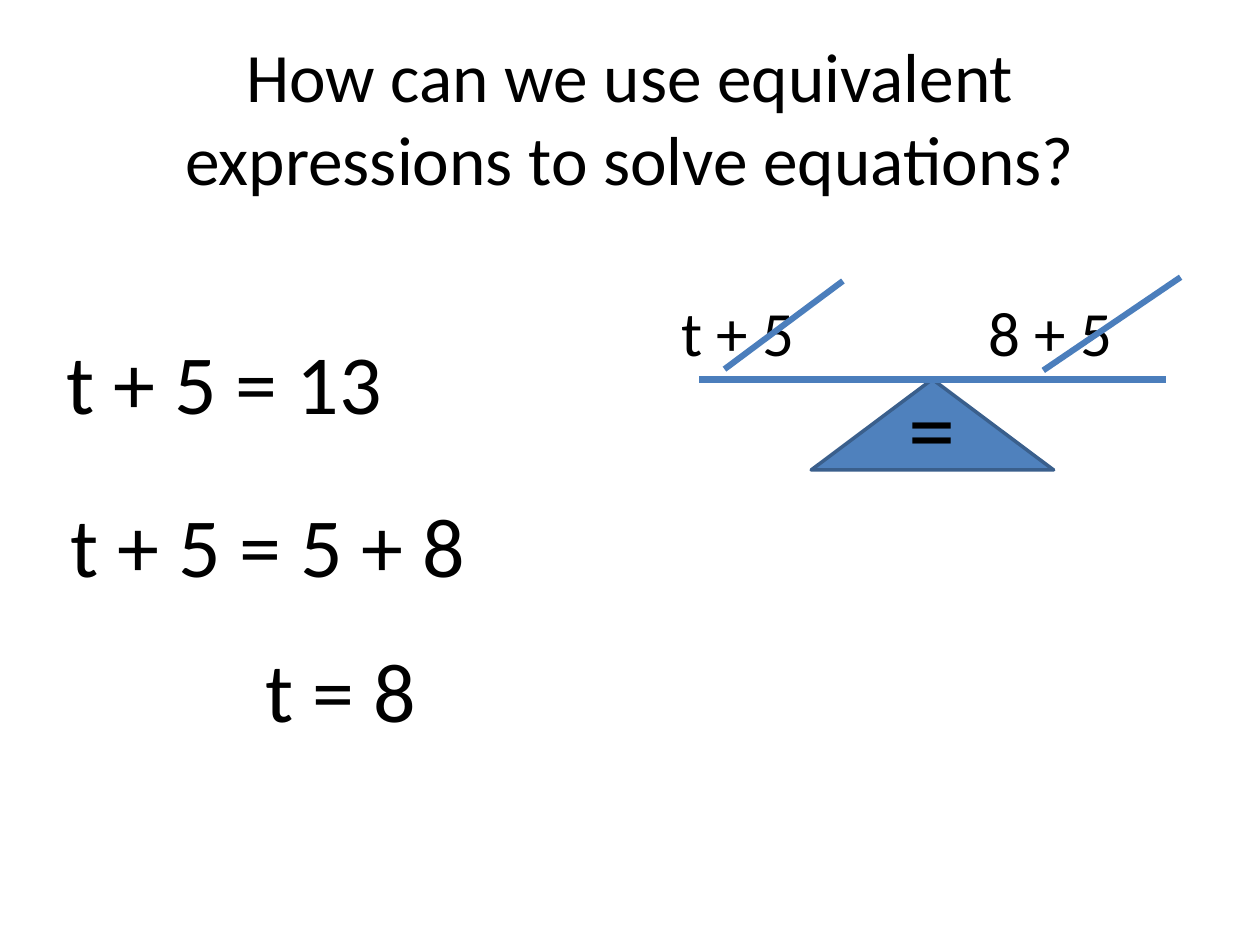
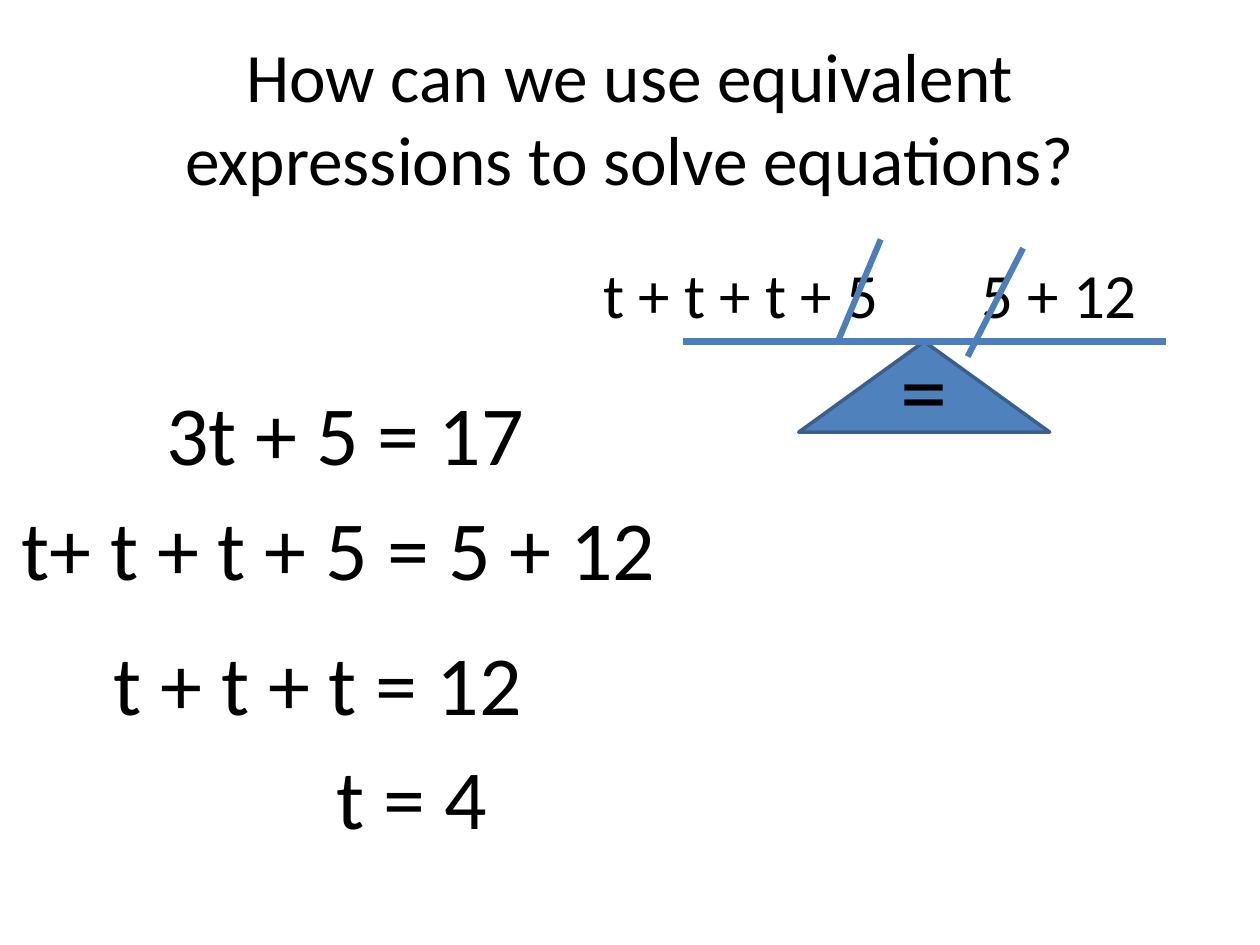
import pptx
import pptx.util
import pptx.dml.color
import pptx.enum.shapes
import pptx.enum.text
import pptx.oxml.ns
import lxml.etree

Inches = pptx.util.Inches
Pt = pptx.util.Pt
ALIGN = pptx.enum.text.PP_ALIGN
ANCHOR = pptx.enum.text.MSO_ANCHOR

COLORS = {"text": "000000", "fill": "4F81BD", "edge": "3A5F8C", "line": "4B7EBC"}
FONT = "Calibri"
TITLE = "How can we use equivalent expressions to solve equations?"
STEP_SIZE, PAN_SIZE, EQUALS_SIZE = 48, 36, 54
FULCRUM_RATIO = 0.52  # fulcrum width as a share of the beam

# Steps: text, left, top, width. Pans: text, left, width. Strikes: x1, y1, x2, y2.
SLIDES = [
    {
        "steps": [
            ("t + 5 = 13", 0.43, 2.57, 3.46),
            ("t + 5 = 5 + 8", 0.46, 3.87, 4.62),
            ("t = 8", 2.01, 5.02, 4.62),
        ],
        "beam": (5.55, 9.25, 3.01),
        "pans": [("t + 5", 5.31, 1.87), ("8 + 5", 7.75, 1.87)],
        "strikes": [(5.75, 2.93, 6.69, 2.23), (8.28, 2.94, 9.37, 2.2)],
    },
    {
        "steps": [
            ("3t + 5 = 17", 1.22, 2.98, 3.46),
            ("t+ t + t + 5 = 5 + 12", 0.07, 3.89, 5.39),
            ("t + t + t = 12", 0.8, 4.96, 4.62),
            ("t = 4", 2.57, 5.87, 4.62),
        ],
        "beam": (5.42, 9.25, 2.71),
        "pans": [("t + t + t + 5", 4.69, 2.42), ("5 + 12", 7.69, 1.94)],
        "strikes": [(6.65, 2.71, 6.99, 1.9), (7.68, 2.83, 8.12, 1.97)],
    },
]


def rgb(name):
    return pptx.dml.color.RGBColor.from_string(COLORS[name])


def add_text(slide, text, box, size, align=ALIGN.LEFT, anchor=ANCHOR.TOP):
    sp = slide.shapes.add_textbox(*map(Inches, box))
    tf = sp.text_frame
    for key, value in {"word_wrap": True, "vertical_anchor": anchor}.items():
        setattr(tf, key, value)
    p = tf.paragraphs[0]
    p.alignment = align
    r = p.add_run()
    r.text = text
    for key, value in {"name": FONT, "size": Pt(size)}.items():
        setattr(r.font, key, value)
    r.font.color.rgb = rgb("text")


def add_line(slide, x1, y1, x2, y2, width):
    sp = slide.shapes.add_connector(
        pptx.enum.shapes.MSO_CONNECTOR.STRAIGHT, *map(Inches, (x1, y1, x2, y2)))
    sp.line.color.rgb = rgb("line")
    sp.line.width = Pt(width)
    lxml.etree.SubElement(sp.element.spPr, pptx.oxml.ns.qn("a:effectLst"))


def add_fulcrum(slide, center, top, width):
    sp = slide.shapes.add_shape(
        pptx.enum.shapes.MSO_SHAPE.ISOSCELES_TRIANGLE,
        *map(Inches, (center - width / 2, top, width, 0.72)))
    sp.shadow.inherit = False
    sp.fill.solid()
    sp.fill.fore_color.rgb = rgb("fill")
    sp.line.color.rgb = rgb("edge")
    sp.line.width = Pt(2)


def add_balance(slide, beam, pans, strikes):
    left, right, y = beam
    center = (left + right) / 2
    add_fulcrum(slide, center, y, FULCRUM_RATIO * (right - left))
    add_line(slide, left, y, right, y, 4)
    for text, x, width in pans:
        add_text(slide, text, (x, y - 0.73, width, 0.71), PAN_SIZE)
    add_text(slide, "=", (center - 0.29, y - 0.13, 0.58, 1.01), EQUALS_SIZE)
    # Cancelled terms
    for ends in strikes:
        add_line(slide, *ends, 3.5)


def main():
    prs = pptx.Presentation()
    prs.slide_width, prs.slide_height = Inches(10), Inches(7.5)
    for content in SLIDES:
        slide = prs.slides.add_slide(prs.slide_layouts[6])
        add_text(slide, TITLE, (0.5, 0.3, 9, 1.25), 39.6, ALIGN.CENTER, ANCHOR.MIDDLE)
        # Worked solution
        for text, left, top, width in content["steps"]:
            add_text(slide, text, (left, top, width, 0.91), STEP_SIZE)
        add_balance(slide, content["beam"], content["pans"], content["strikes"])
    prs.save("out.pptx")


if __name__ == "__main__":
    main()
